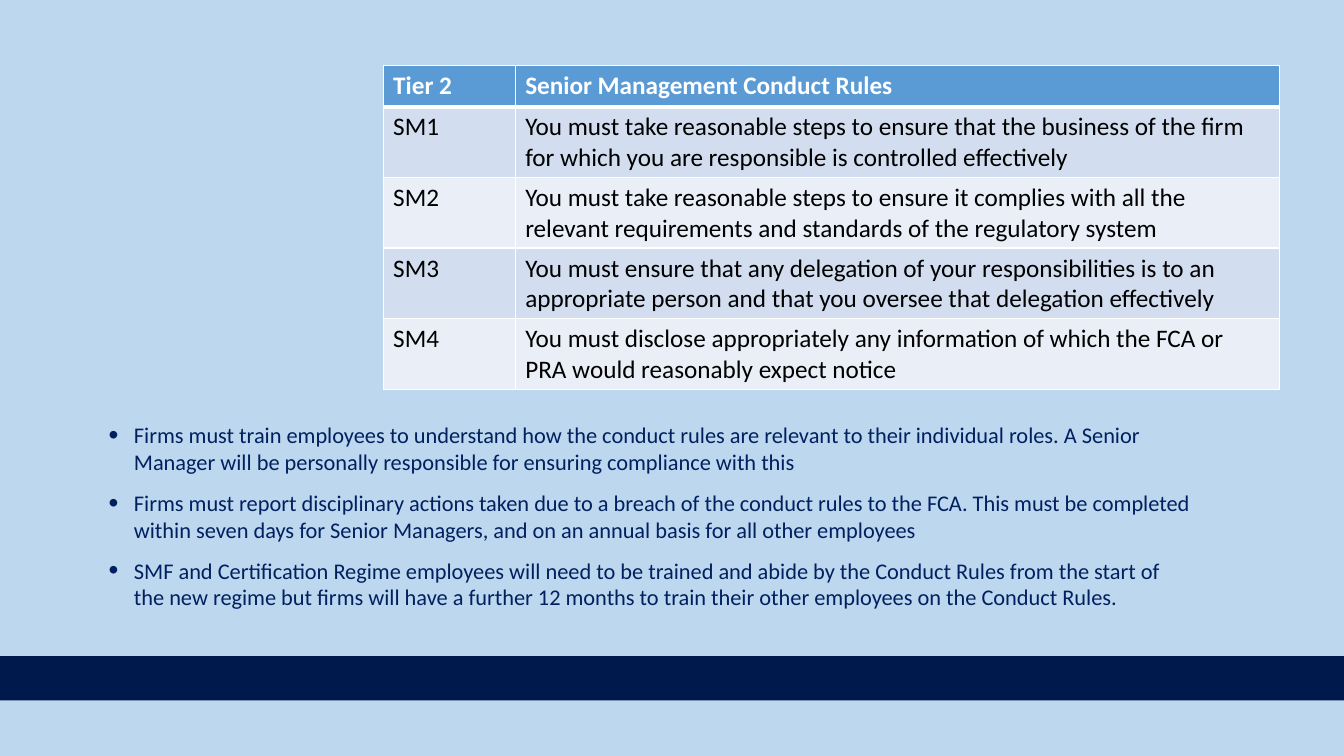
from dataclasses import dataclass

from lxml import etree
from pptx import Presentation
from pptx import oxml
from pptx import util as u
from pptx.dml.color import RGBColor
from pptx.enum import shapes, text
from pptx.oxml import ns

SKY = RGBColor(0xBD, 0xD7, 0xEE)
NAVY = RGBColor(0x00, 0x19, 0x4C)
INK = RGBColor(0x00, 0x20, 0x60)
BLUE = RGBColor(0x5B, 0x9B, 0xD5)
BANDS = (RGBColor(0xD2, 0xDE, 0xEF), RGBColor(0xEA, 0xEF, 0xF7))
WHITE = RGBColor(0xFF, 0xFF, 0xFF)
BLACK = RGBColor(0x00, 0x00, 0x00)

HEADER_FONT = {"name": "Calibri", "size": u.Pt(18), "bold": True}
BODY_FONT = {**HEADER_FONT, "bold": False}
BULLET_FONT = {"name": "Calibri", "size": u.Pt(16)}


@dataclass(frozen=True)
class Rule:
    code: str
    wording: str


HEADER = Rule("Tier 2", "Senior Management Conduct Rules")
RULES = [
    Rule("SM1", "You must take reasonable steps to ensure that the business of the firm "
         "for which you are responsible is controlled effectively"),
    Rule("SM2", "You must take reasonable steps to ensure it complies with all the "
         "relevant requirements and standards of the regulatory system"),
    Rule("SM3", "You must ensure that any delegation of your responsibilities is to an "
         "appropriate person and that you oversee that delegation effectively"),
    Rule("SM4", "You must disclose appropriately any information of which the FCA or "
         "PRA would reasonably expect notice"),
]
DUTIES = [
    "Firms must train employees to understand how the conduct rules are relevant to their "
    "individual roles. A Senior Manager will be personally responsible for ensuring "
    "compliance with this",
    "Firms must report disciplinary actions taken due to a breach of the conduct rules to "
    "the FCA. This must be completed within seven days for Senior Managers, and on an "
    "annual basis for all other employees",
    "SMF and Certification Regime employees will need to be trained and abide by the "
    "Conduct Rules from the start of the new regime but firms will have a further 12 months "
    "to train their other employees on the Conduct Rules.",
]


def format_font(font, values: dict, color: RGBColor) -> None:
    for name, value in values.items():
        setattr(font, name, value)
    font.color.rgb = color


def add_borders(cell, top: float, bottom: float) -> None:
    tc_pr = cell._tc.get_or_add_tcPr()
    widths = {"lnL": 1, "lnR": 1, "lnT": top, "lnB": bottom}
    for i, (side, width) in enumerate(widths.items()):
        tc_pr.insert(i, oxml.parse_xml(
            f'<a:{side} {ns.nsdecls("a")} w="{u.Pt(width)}"><a:solidFill>'
            f'<a:srgbClr val="{WHITE}"/></a:solidFill></a:{side}>'))


def add_bar(s) -> None:
    sp = s.shapes.add_shape(shapes.MSO_SHAPE.RECTANGLE, u.Inches(-0.07), u.Inches(6.51),
                            u.Inches(13.62), u.Inches(0.44))
    sp.shadow.inherit = False
    sp.fill.solid()
    sp.fill.fore_color.rgb = NAVY
    sp.line.fill.background()


def add_rules(s, rules: list[Rule]) -> None:
    table = s.shapes.add_table(len(rules) + 1, 2, u.Inches(3.8), u.Inches(0.65),
                               u.Inches(8.89), u.Inches(3.21)).table
    for column, width in zip(table.columns, (1.31, 7.58)):
        column.width = u.Inches(width)
    for i, rule in enumerate([HEADER, *rules]):
        is_header = i == 0
        table.rows[i].height = u.Inches(0.41 if is_header else 0.7)
        for cell, wording in zip(table.rows[i].cells, (rule.code, rule.wording)):
            cell.fill.solid()
            cell.fill.fore_color.rgb = BLUE if is_header else BANDS[(i - 1) % 2]
            add_borders(cell, 3 if i == 1 else 1, 3 if is_header else 1)
            r = cell.text_frame.paragraphs[0].add_run()
            r.text = wording
            format_font(r.font, HEADER_FONT if is_header else BODY_FONT,
                        WHITE if is_header else BLACK)


def add_bullet(p) -> None:
    p_pr = p._p.get_or_add_pPr()
    p_pr.set("marL", str(u.Inches(0.25)))
    p_pr.set("indent", str(u.Inches(-0.25)))
    for tag, values in {"a:buSzPct": {"val": "125000"},
                        "a:buFont": {"typeface": "Arial"},
                        "a:buChar": {"char": "•"}}.items():
        etree.SubElement(p_pr, ns.qn(tag), values)


def add_duties(s, duties: list[str]) -> None:
    tf = s.shapes.add_textbox(u.Inches(0.98), u.Inches(4.13),
                              u.Inches(10.98), u.Inches(2)).text_frame
    tf.word_wrap = True
    tf.auto_size = text.MSO_AUTO_SIZE.SHAPE_TO_FIT_TEXT
    for i, duty in enumerate(duties):
        p = tf.add_paragraph() if i else tf.paragraphs[0]
        add_bullet(p)
        p.space_before = u.Pt(10 if i else 0)
        r = p.add_run()
        r.text = duty
        format_font(r.font, BULLET_FONT, INK)


def main() -> None:
    prs = Presentation()
    prs.slide_width, prs.slide_height = u.Inches(13.33), u.Inches(7.5)
    s = prs.slides.add_slide(prs.slide_layouts[6])
    s.background.fill.solid()
    s.background.fill.fore_color.rgb = SKY
    add_bar(s)
    add_duties(s, DUTIES)
    add_rules(s, RULES)
    prs.save("out.pptx")


if __name__ == "__main__":
    main()
